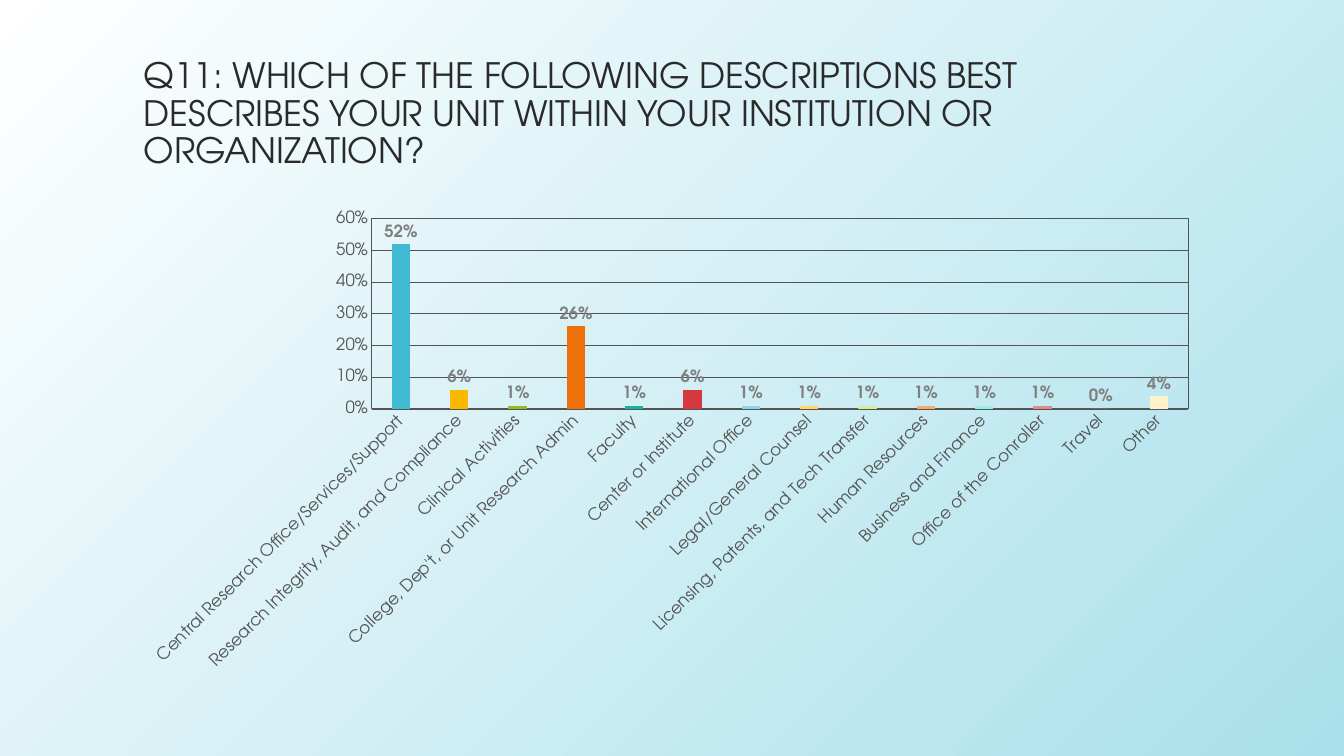
import pptx
import pptx.chart.data
import pptx.dml.color
import pptx.enum.chart
import pptx.enum.text
import pptx.oxml
import pptx.util

Inches, Pt = pptx.util.Inches, pptx.util.Pt
FACE = "TeX Gyre Adventor"
GREY = "545454"
TITLE = ("Q11: WHICH OF THE FOLLOWING DESCRIPTIONS BEST DESCRIBES "
         "YOUR UNIT WITHIN YOUR INSTITUTION OR ORGANIZATION?")
UNITS = [
    ("Central Research Office/Services/Support", 0.52, "40BAD2"),
    ("Research Integrity, Audit, and Compliance", 0.06, "FAB900"),
    ("Clinical Activities", 0.01, "90BB23"),
    ("College, Dep't, or Unit Research Admin", 0.26, "EE7008"),
    ("Faculty", 0.01, "1AB39F"),
    ("Center or Institute", 0.06, "D5393D"),
    ("International Office", 0.01, "8CD6E4"),
    ("Legal/General Counsel", 0.01, "FFD663"),
    ("Licensing, Patents, and Tech Transfer", 0.01, "D7ED9E"),
    ("Human Resources", 0.01, "FAA966"),
    ("Business and Finance", 0.01, "94F0E4"),
    ("Office of the Conroller", 0.01, "E6888B"),
    ("Travel", 0, "D9F1F6"),
    ("Other", 0.04, "FFF1CB"),
]
LAYOUT = """<c:layout {ns}><c:manualLayout>
<c:layoutTarget val="inner"/><c:xMode val="edge"/><c:yMode val="edge"/>
<c:x val="0.221"/><c:y val="0.036"/><c:w val="0.759"/><c:h val="0.397"/>
</c:manualLayout></c:layout>"""
FRAME = """<c:spPr {ns}><a:noFill/><a:ln w="9525"><a:solidFill>
<a:srgbClr val="{tint}"/></a:solidFill></a:ln></c:spPr>"""


def color(code):
    """Turn a hex string into a colour."""
    return pptx.dml.color.RGBColor.from_string(code)


def style(font, size, tint, bold=False):
    """Set face, size, colour and weight of a font."""
    font.name, font.size, font.bold = FACE, Pt(size), bold
    font.color.rgb = color(tint)


def shade(slide, tints):
    """Fill the background with a diagonal gradient."""
    fill = slide.background.fill
    fill.gradient()
    fill.gradient_angle = 315
    for stop, tint in zip(fill.gradient_stops, tints):
        stop.color.rgb = color(tint)


def add_title(slide, box):
    """Place the question at the bottom of its box."""
    frame = slide.shapes.add_textbox(*map(Inches, box)).text_frame
    frame.word_wrap = True
    frame.vertical_anchor = pptx.enum.text.MSO_ANCHOR.BOTTOM
    para = frame.paragraphs[0]
    para.text = TITLE
    para.line_spacing = 0.9
    style(para.font, 25, "2A2A2A")


def style_axes(chart):
    """Style both axes and slant the unit names."""
    units, share = chart.category_axis, chart.value_axis
    for axis in (units, share):
        axis.major_tick_mark = pptx.enum.chart.XL_TICK_MARK.NONE
        axis.minor_tick_mark = pptx.enum.chart.XL_TICK_MARK.NONE
        style(axis.tick_labels.font, 12, GREY)
    units.format.line.color.rgb = color(GREY)
    units.format.line.width = Pt(1)
    share.format.line.fill.background()
    share.minimum_scale, share.maximum_scale, share.major_unit = 0, 0.6, 0.1
    share.tick_labels.number_format = "0%"
    share.tick_labels.number_format_is_linked = False
    grid = share.major_gridlines.format.line
    grid.color.rgb, grid.width = color(GREY), Pt(0.75)
    body = chart.element.xpath(".//c:catAx/c:txPr/a:bodyPr")[0]
    body.set("rot", "-2700000")
    body.set("vert", "horz")


def frame_plot(chart):
    """Fix the plot area's place and outline it."""
    area = chart.element.xpath(".//c:plotArea")[0]
    for old in area.xpath("./c:layout"):
        area.remove(old)
    names = pptx.oxml.ns.nsdecls("c", "a")
    area.insert(0, pptx.oxml.parse_xml(LAYOUT.format(ns=names)))
    area.append(pptx.oxml.parse_xml(FRAME.format(ns=names, tint=GREY)))


def add_bars(slide, box):
    """Chart the share of answers for each unit."""
    names, shares, tints = zip(*UNITS)
    data = pptx.chart.data.CategoryChartData(number_format="0%")
    data.categories = names
    data.add_series("Series 1", shares)
    kind = pptx.enum.chart.XL_CHART_TYPE.COLUMN_CLUSTERED
    chart = slide.shapes.add_chart(kind, *map(Inches, box), data).chart
    chart.has_legend = chart.has_title = False
    style(chart.font, 10, GREY)
    style_axes(chart)
    frame_plot(chart)
    plot = chart.plots[0]
    plot.gap_width, plot.overlap = 219, -27
    plot.vary_by_categories = False
    bars = plot.series[0]
    for i, tint in enumerate(tints):
        fill = bars.points[i].format.fill
        fill.solid()
        fill.fore_color.rgb = color(tint)
    labels = bars.data_labels
    labels.show_value = True
    labels.number_format, labels.number_format_is_linked = "0%", False
    labels.position = pptx.enum.chart.XL_LABEL_POSITION.OUTSIDE_END
    style(labels.font, 12, "7F7F7F", True)


def main():
    """Build and save the slide."""
    deck = pptx.Presentation()
    deck.slide_width, deck.slide_height = Inches(13.33), Inches(7.5)
    slide = deck.slides.add_slide(deck.slide_layouts[6])
    shade(slide, ("FFFFFF", "A9E0EB"))
    add_title(slide, (1.33, 0.3, 10.67, 1.45))
    add_bars(slide, (1.33, 2, 10.67, 4.75))
    deck.save("out.pptx")


if __name__ == "__main__":
    main()
